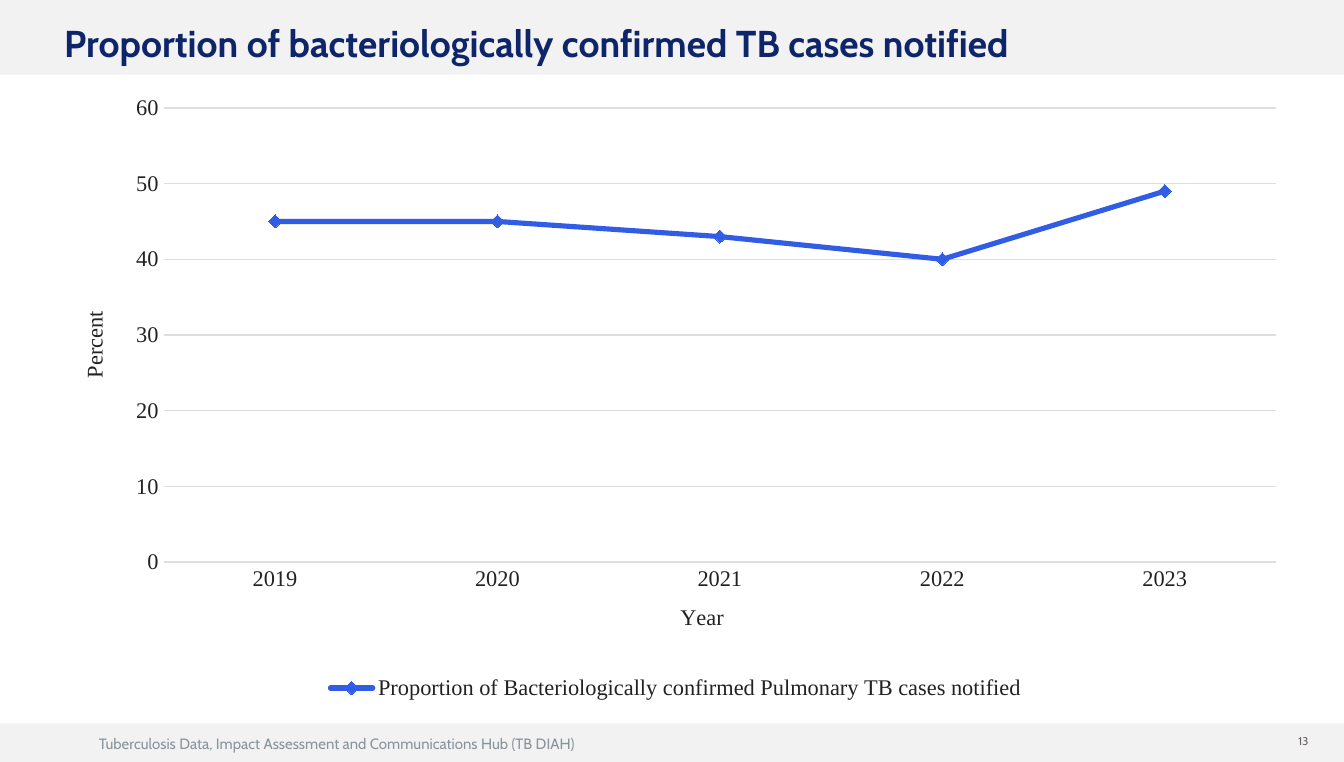
"""Build the slide on bacteriologically confirmed TB cases notified."""
from dataclasses import dataclass
from typing import Any

from lxml.etree import SubElement
from pptx import Presentation
from pptx.chart.data import CategoryChartData
from pptx.dml.color import RGBColor
from pptx.enum.chart import XL_CHART_TYPE, XL_LEGEND_POSITION, XL_MARKER_STYLE, XL_TICK_MARK
from pptx.enum.shapes import MSO_SHAPE
from pptx.enum.text import MSO_ANCHOR, MSO_AUTO_SIZE, PP_ALIGN
from pptx.oxml.ns import qn
from pptx.util import Cm, Pt

SLIDE_WIDTH, SLIDE_HEIGHT = 25.4, 14.4
BAND_GREY, GRID_GREY, SERIES_BLUE = "F2F2F2", "DEDEDE", "305DE4"
CHART_FONT = {"name": "Times New Roman", "size": Pt(12), "bold": False}
CHART_INK = "222222"


@dataclass
class Band:
    top: float
    height: float


@dataclass
class Label:
    text: str
    box: tuple[float, float, float, float]
    size: int
    color: str
    align: PP_ALIGN = PP_ALIGN.LEFT
    anchor: MSO_ANCHOR = MSO_ANCHOR.TOP
    bold: bool = False


BANDS = [Band(0, 1.41), Band(13.67, 0.73)]
HEADING = Label("Proportion of bacteriologically confirmed TB cases notified",
                (0.96, 0.23, 21.59, 1.12), 20, "0E256A", anchor=MSO_ANCHOR.BOTTOM, bold=True)
FOOTER = Label("Tuberculosis Data, Impact Assessment and Communications Hub (TB DIAH)",
               (1.62, 13.75, 12.7, 0.61), 8, "879499")
PAGE_NUMBER = Label("13", (23.2, 13.74, 1.78, 0.51), 6, "6C6463",
                    PP_ALIGN.RIGHT, MSO_ANCHOR.MIDDLE)
CHART_BOX = (0.97, 1.57, 23.62, 11.76)
PERCENT_BY_YEAR = {"2019": 45, "2020": 45, "2021": 43, "2022": 40, "2023": 49}


def set_all(target: Any, values: dict[str, Any]) -> None:
    """Set every named attribute on the target."""
    for name, value in values.items():
        setattr(target, name, value)


def paint(color_format: Any, color: str) -> None:
    """Apply a hex colour to a colour format."""
    color_format.rgb = RGBColor.from_string(color)


def fill_solid(fill: Any, color: str) -> None:
    """Make a fill solid in the given colour."""
    fill.solid()
    paint(fill.fore_color, color)


def style_font(font: Any, values: dict[str, Any], color: str) -> None:
    """Format a font and colour it."""
    set_all(font, values)
    paint(font.color, color)


def style_line(line: Any, color: str, width: float) -> None:
    """Give a line its colour and width in points."""
    paint(line.color, color)
    line.width = Pt(width)


def draw_band(slide: Any, band: Band) -> None:
    """Draw a full-width grey band."""
    strip = slide.shapes.add_shape(MSO_SHAPE.RECTANGLE, 0, Cm(band.top),
                                   Cm(SLIDE_WIDTH), Cm(band.height))
    strip.shadow.inherit = False
    fill_solid(strip.fill, BAND_GREY)
    strip.line.fill.background()


def write_label(holder: Any, label: Label) -> None:
    """Place a text holder and write its label."""
    set_all(holder, dict(zip(("left", "top", "width", "height"), map(Cm, label.box))))
    frame = holder.text_frame
    frame.text = label.text
    set_all(frame, {"word_wrap": True, "auto_size": MSO_AUTO_SIZE.SHAPE_TO_FIT_TEXT,
                    "vertical_anchor": label.anchor})
    paragraph = frame.paragraphs[0]
    paragraph.alignment = label.align
    style_font(paragraph.runs[0].font,
               {"name": "Cabin", "size": Pt(label.size), "bold": label.bold}, label.color)


def set_layout(parent: Any, index: int, settings: dict[str, Any]) -> None:
    """Replace the layout of a chart part by a manual one."""
    for existing in parent.findall(qn("c:layout")):
        parent.remove(existing)
    layout = SubElement(parent, qn("c:layout"))
    manual = SubElement(layout, qn("c:manualLayout"))
    for tag, value in settings.items():
        SubElement(manual, qn(f"c:{tag}")).set("val", str(value))
    parent.insert(index, layout)


def style_axis(axis: Any, title: str, x: float, y: float) -> None:
    """Format an axis and place its title."""
    set_all(axis, {"major_tick_mark": XL_TICK_MARK.NONE, "minor_tick_mark": XL_TICK_MARK.NONE})
    style_font(axis.tick_labels.font, CHART_FONT, CHART_INK)
    axis.axis_title.text_frame.text = title
    style_font(axis.axis_title.text_frame.paragraphs[0].runs[0].font, CHART_FONT, CHART_INK)
    set_layout(axis.axis_title.element, 1, {"xMode": "edge", "yMode": "edge", "x": x, "y": y})


def draw_chart(slide: Any) -> None:
    """Draw the line chart of yearly percentages."""
    data = CategoryChartData()
    data.categories = list(PERCENT_BY_YEAR)
    data.add_series("Proportion of Bacteriologically confirmed Pulmonary TB cases notified",
                    list(PERCENT_BY_YEAR.values()))
    chart = slide.shapes.add_chart(XL_CHART_TYPE.LINE_MARKERS, *map(Cm, CHART_BOX), data).chart
    set_all(chart, {"has_title": False, "has_legend": True})
    style_font(chart.font, CHART_FONT, CHART_INK)
    set_all(chart.legend, {"position": XL_LEGEND_POSITION.BOTTOM, "include_in_layout": False})
    style_font(chart.legend.font, CHART_FONT, CHART_INK)
    set_layout(chart.element.find(".//" + qn("c:plotArea")), 0,
               {"layoutTarget": "inner", "xMode": "edge", "yMode": "edge",
                "x": 0.09, "y": 0.04, "w": 0.89, "h": 0.73})

    years, percents = chart.category_axis, chart.value_axis
    style_axis(years, "Year", 0.5, 0.83)
    style_axis(percents, "Percent", 0.02, 0.36)
    style_line(years.format.line, GRID_GREY, 0.75)
    set_all(percents, {"minimum_scale": 0, "maximum_scale": 60, "major_unit": 10})
    percents.format.line.fill.background()
    style_line(percents.major_gridlines.format.line, GRID_GREY, 0.75)

    plot = chart.plots[0]
    plot.vary_by_categories = False
    proportion = plot.series[0]
    proportion.smooth = False
    style_line(proportion.format.line, SERIES_BLUE, 2.75)
    series_line = "/".join(map(qn, ("c:ser", "c:spPr", "a:ln")))
    chart.element.find(".//" + series_line).set("cap", "rnd")
    set_all(proportion.marker, {"style": XL_MARKER_STYLE.DIAMOND, "size": 7})
    fill_solid(proportion.marker.format.fill, "0070C0")
    proportion.marker.format.line.fill.background()


def main() -> None:
    """Assemble and save the slide."""
    deck = Presentation()
    set_all(deck, {"slide_width": Cm(SLIDE_WIDTH), "slide_height": Cm(SLIDE_HEIGHT)})
    slide = deck.slides.add_slide(deck.slide_layouts[5])
    for band in BANDS:
        draw_band(slide, band)
    for label in (FOOTER, PAGE_NUMBER):
        write_label(slide.shapes.add_textbox(0, 0, 0, 0), label)
    heading = slide.shapes.title
    heading.element.getparent().append(heading.element)
    write_label(heading, HEADING)
    draw_chart(slide)
    deck.save("out.pptx")


if __name__ == "__main__":
    main()
